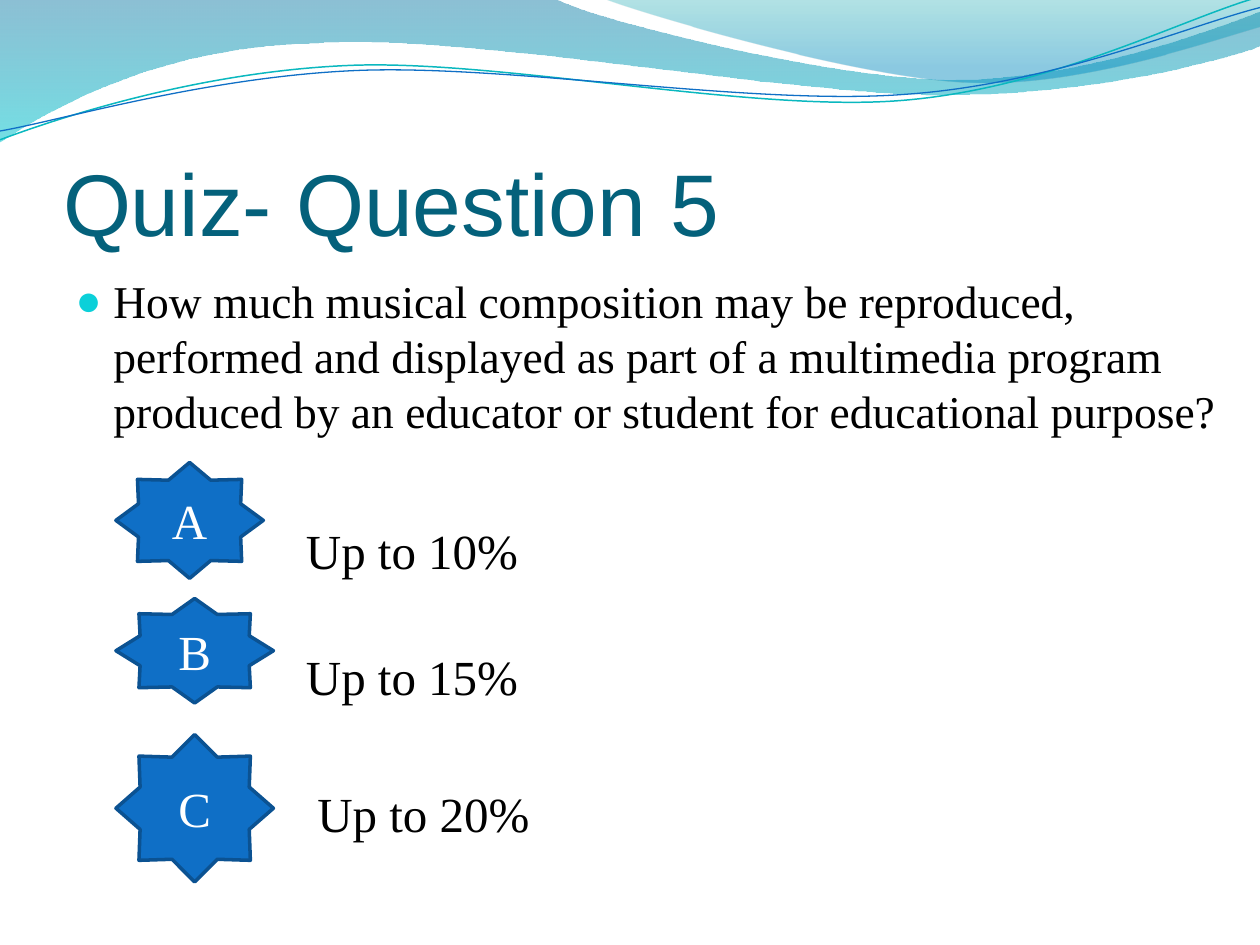
from pptx import Presentation
from pptx.dml.color import RGBColor
from pptx.enum.shapes import MSO_SHAPE
from pptx.enum.text import MSO_ANCHOR, MSO_AUTO_SIZE, PP_ALIGN
from pptx.oxml.ns import qn
from pptx.util import Inches, Pt
from lxml.etree import SubElement

THEME = {
    "title": ("Arial", 50, "04617B"),
    "question": ("Times New Roman", 26, "000000"),
    "answer": ("Times New Roman", 28, "000000"),
    "letter": ("Times New Roman", 28, "FFFFFF"),
    "bullet": "0BD0D9",
    "star": "0F6FC6",
    "star_edge": "0B5292",
}
UNITS = 100  # outline units per inch

presentation = Presentation()
presentation.slide_width, presentation.slide_height = Inches(10), Inches(7.5)
slide = presentation.slides.add_slide(presentation.slide_layouts[1])
rgb = RGBColor.from_string


def write(frame, text, style):
    """Put one styled paragraph into a text frame."""
    frame.word_wrap = True
    paragraph = frame.paragraphs[0]
    paragraph.text = text
    font = paragraph.font
    font.name, font.size = THEME[style][0], Pt(THEME[style][1])
    font.color.rgb = rgb(THEME[style][2])
    return paragraph


def draw_outline(steps, closed):
    """Two numbers are a straight step, six a Bezier curve (in inches)."""
    ends = [(step[-2] * UNITS, step[-1] * UNITS) for step in steps]
    builder = slide.shapes.build_freeform(*ends[0], scale=Inches(1) / UNITS)
    builder.add_line_segments(ends[1:], close=closed)
    outline = builder.convert_to_shape()
    outline.shadow.inherit = False
    left, top = (min(values) for values in zip(*ends))
    segments = list(outline._element.iter(qn("a:lnTo")))
    for segment, step in zip(segments, steps[1:]):
        if len(step) == 6:
            segment.tag = qn("a:cubicBezTo")
            segment.remove(segment[0])
            for x, y in zip(step[::2], step[1::2]):
                SubElement(segment, qn("a:pt"), x=str(round(x * UNITS - left)),
                           y=str(round(y * UNITS - top)))
    return outline


# Header waves: outline, then gradient stops (position, colour, opacity %)
waves = [
    ([(0, 0), (4.4, -0.01), (4.76, 0.17, 6.64, 0.63, 7.58, 0.63),
      (8.53, 0.63, 9.58, 0.26, 10, 0.09), (10.01, 0.36),
      (9.83, 0.44, 8.7, 0.76, 7.46, 0.75), (6.22, 0.75, 3.82, 0.28, 2.57, 0.34),
      (1.29, 0.36, 0.46, 0.83, -0.01, 1.13)],
     [(0, "0074A1", 45), (1, "00C6CF", 55)]),
    ([(4.79, -0.01), (5.09, 0.11, 6.82, 0.62, 7.69, 0.65),
      (8.56, 0.69, 9.61, 0.32, 10, 0.21), (10, 0)],
     [(0, "00A1A9", 30), (0.8, "008BBF", 45)]),
]
for steps, stops in waves:
    wave = draw_outline(steps, True)
    wave.line.fill.background()
    wave.fill.gradient()
    wave.fill.gradient_angle = 270
    for stop, (position, colour, opacity) in zip(wave.fill.gradient_stops, stops):
        stop.position, stop.color.rgb = position, rgb(colour)
    for colour_node, stop in zip(wave._element.spPr.iter(qn("a:srgbClr")), stops):
        SubElement(colour_node, qn("a:alpha"), val=str(stop[2] * 1000))

# Thin lines along the waves
strands = [
    ([(0, 1.11), (0.48, 0.93, 1.58, 0.57, 2.77, 0.52),
      (3.95, 0.47, 5.93, 0.89, 7.13, 0.8), (8.33, 0.71, 9.38, 0.15, 9.98, -0.02)],
     "0AB8BF", 0.85),
    ([(0, 1.04), (0.47, 0.96, 1.64, 0.61, 2.83, 0.56),
      (4.03, 0.51, 5.97, 0.84, 7.17, 0.75), (8.36, 0.67, 9.41, 0.21, 10, 0.06)],
     "0F6FC6", 0.75),
]
for steps, colour, weight in strands:
    strand = draw_outline(steps, False)
    strand.fill.background()
    strand.line.color.rgb, strand.line.width = rgb(colour), Pt(weight)

# Title
title = slide.shapes.title
title.left, title.top, title.width, title.height = map(Inches, (0.5, 0.77, 9, 1.25))
heading = title.text_frame
heading.auto_size = MSO_AUTO_SIZE.NONE
heading.vertical_anchor = MSO_ANCHOR.BOTTOM
heading.margin_left = heading.margin_right = heading.margin_bottom = 0
write(heading, "Quiz- Question 5", "title").alignment = PP_ALIGN.LEFT

# Question with its round bullet
body = slide.placeholders[1]
body.left, body.top, body.width, body.height = map(Inches, (0.5, 2.12, 9.33, 5.05))
body.text_frame.auto_size = MSO_AUTO_SIZE.NONE
properties = body.text_frame.paragraphs[0]._p.get_or_add_pPr()
properties.set("marL", str(Inches(0.3)))
properties.set("indent", str(-Inches(0.3)))
SubElement(SubElement(properties, qn("a:buClr")), qn("a:srgbClr"), val=THEME["bullet"])
SubElement(properties, qn("a:buSzPct"), val="95000")
SubElement(properties, qn("a:buChar"), char="●")
question = write(body.text_frame,
                 "How much musical composition may be reproduced, performed and "
                 "displayed as part of a multimedia program produced by an educator "
                 "or student for educational purpose?", "question")
question.space_before = Pt(5)

# Answers: letter, star top, width and height, then text, left, top and width
answers = [
    ("A", 3.67, 1.17, 0.92, "Up to 10%", 2.33, 4.08, 2.83),
    ("B", 4.75, 1.25, 0.83, "Up to 15%", 2.33, 5.08, 2.17),
    ("C", 5.83, 1.25, 1.17, "Up to 20%", 2.42, 6.17, 2.08),
]
for letter, star_top, star_width, star_height, answer, left, top, width in answers:
    star = slide.shapes.add_shape(MSO_SHAPE.STAR_8_POINT, *map(
        Inches, (0.92, star_top, star_width, star_height)))
    star.shadow.inherit = False
    star.fill.solid()
    star.fill.fore_color.rgb = rgb(THEME["star"])
    star.line.color.rgb, star.line.width = rgb(THEME["star_edge"]), Pt(2)
    star.text_frame.vertical_anchor = MSO_ANCHOR.MIDDLE
    write(star.text_frame, letter, "letter").alignment = PP_ALIGN.CENTER

    label = slide.shapes.add_textbox(*map(Inches, (left, top, width, 0.57)))
    label.text_frame.auto_size = MSO_AUTO_SIZE.SHAPE_TO_FIT_TEXT
    write(label.text_frame, answer, "answer")

presentation.save("out.pptx")
